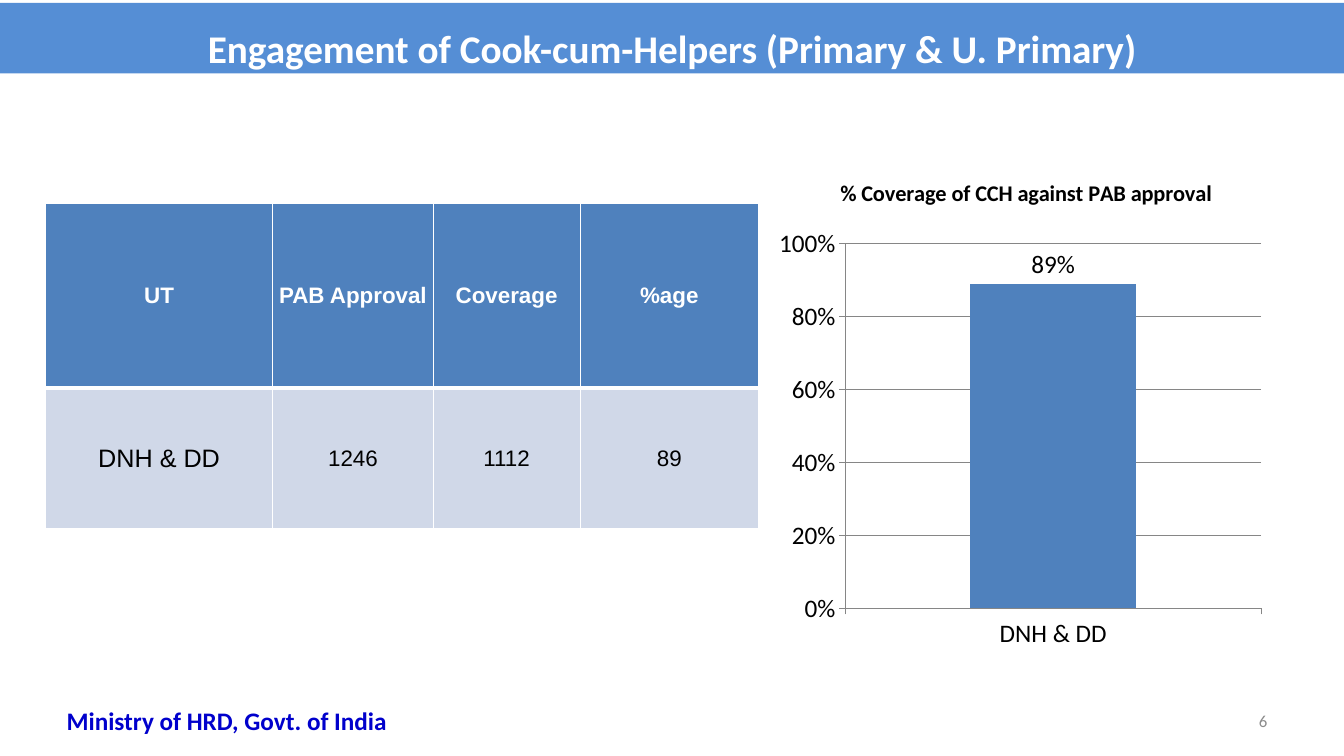
"""Build the slide on engagement of cook-cum-helpers."""
from dataclasses import dataclass
from typing import Any

from lxml.etree import SubElement
from pptx import Presentation
from pptx.chart.chart import Chart
from pptx.chart.data import CategoryChartData
from pptx.dml.color import RGBColor
from pptx.enum.chart import XL_CHART_TYPE as ChartType
from pptx.enum.chart import XL_LABEL_POSITION as LabelPosition
from pptx.enum.chart import XL_TICK_MARK as TickMark
from pptx.enum.shapes import MSO_SHAPE as Preset
from pptx.enum.text import MSO_ANCHOR as Anchor
from pptx.enum.text import PP_ALIGN as Align
from pptx.oxml import parse_xml
from pptx.oxml.ns import nsdecls, qn
from pptx.table import _Cell as Cell
from pptx.text.text import Font
from pptx.util import Pt

WHITE = RGBColor(0xFF, 0xFF, 0xFF)
BLACK = RGBColor(0x00, 0x00, 0x00)
BANNER_BLUE = RGBColor(0x55, 0x8E, 0xD5)
ACCENT_BLUE = RGBColor(0x4F, 0x81, 0xBD)
PALE_BLUE = RGBColor(0xD0, 0xD8, 0xE8)
MINISTRY_BLUE = RGBColor(0x00, 0x00, 0xCC)
NUMBER_GRAY = RGBColor(0x8C, 0x8C, 0x8C)
AXIS_GRAY = RGBColor(0x86, 0x86, 0x86)


@dataclass(frozen=True)
class TextStyle:
    size: float
    color: RGBColor
    bold: bool = False
    name: str = "Calibri"


@dataclass(frozen=True)
class Caption:
    text: str
    box: tuple[float, float, float, float]
    style: TextStyle
    align: Align
    anchor: Anchor
    fill: RGBColor | None = None
    line_spacing: float = 1.0


@dataclass(frozen=True)
class CoverageRow:
    height: float
    values: tuple[str, ...]
    styles: tuple[TextStyle, ...]
    fill: RGBColor
    bottom_border: float


HEADING = TextStyle(16, WHITE, True, "Arial")
FIGURE = TextStyle(16, BLACK, name="Arial")
TERRITORY = TextStyle(18, BLACK, name="Arial")
AXIS_TEXT = TextStyle(18, BLACK)
CHART_TITLE = TextStyle(16, BLACK, True)

CAPTIONS = (
    Caption("Engagement of Cook-cum-Helpers (Primary & U. Primary)", (0, 2, 960, 50.4),
            TextStyle(28, WHITE, True), Align.CENTER, Anchor.MIDDLE, BANNER_BLUE, 1.4),
    Caption("6", (688.3, 500.4, 224, 28.8), TextStyle(12, NUMBER_GRAY),
            Align.RIGHT, Anchor.MIDDLE),
    Caption("Ministry of HRD, Govt. of India", (20.9, 500.4, 282.2, 28.8),
            TextStyle(18, MINISTRY_BLUE, True), Align.CENTER, Anchor.TOP),
)
COLUMN_WIDTHS = (162.5, 114.5, 105, 127.5)
COVERAGE_ROWS = (
    CoverageRow(132, ("UT", "PAB Approval", "Coverage", "%age"),
                (HEADING,) * 4, ACCENT_BLUE, 3),
    CoverageRow(100, ("DNH & DD", "1246", "1112", "89"),
                (TERRITORY,) + (FIGURE,) * 3, PALE_BLUE, 1),
)
PLOT_AREA = {"x": 0.14, "y": 0.166, "w": 0.828, "h": 0.71}


def apply_style(font: Font, style: TextStyle) -> None:
    formats = {"size": Pt(style.size), "bold": style.bold, "name": style.name}
    for attribute, value in formats.items():
        setattr(font, attribute, value)
    font.color.rgb = style.color


def draw_caption(shapes: Any, caption: Caption) -> None:
    box = [Pt(length) for length in caption.box]
    if caption.fill is None:
        holder = shapes.add_textbox(*box)
    else:
        holder = shapes.add_shape(Preset.RECTANGLE, *box)
        holder.shadow.inherit = False
        holder.fill.solid()
        holder.fill.fore_color.rgb = caption.fill
        holder.line.fill.background()
    frame = holder.text_frame
    frame.word_wrap = True
    frame.vertical_anchor = caption.anchor
    paragraph = frame.paragraphs[0]
    paragraph.alignment = caption.align
    paragraph.line_spacing = caption.line_spacing
    run = paragraph.add_run()
    run.text = caption.text
    apply_style(run.font, caption.style)


def set_borders(cell: Cell, bottom: float) -> None:
    properties = cell._tc.get_or_add_tcPr()
    widths = {"lnL": 1, "lnR": 1, "lnT": 1, "lnB": bottom}
    for position, (side, width) in enumerate(widths.items()):
        properties.insert(position, parse_xml(
            f'<a:{side} {nsdecls("a")} w="{Pt(width)}"><a:solidFill>'
            f'<a:srgbClr val="{WHITE}"/></a:solidFill></a:{side}>'))


def draw_coverage_table(shapes: Any) -> None:
    heights = [row.height for row in COVERAGE_ROWS]
    table = shapes.add_table(len(heights), len(COLUMN_WIDTHS), Pt(32.4), Pt(145.4),
                             Pt(sum(COLUMN_WIDTHS)), Pt(sum(heights))).table
    table.horz_banding = False
    for column, width in zip(table.columns, COLUMN_WIDTHS):
        column.width = Pt(width)
    for table_row, row in zip(table.rows, COVERAGE_ROWS):
        table_row.height = Pt(row.height)
        for cell, value, style in zip(table_row.cells, row.values, row.styles):
            for side in ("left", "top", "right", "bottom"):
                setattr(cell, f"margin_{side}", Pt(0))
            cell.vertical_anchor = Anchor.MIDDLE
            cell.fill.solid()
            cell.fill.fore_color.rgb = row.fill
            set_borders(cell, row.bottom_border)
            paragraph = cell.text_frame.paragraphs[0]
            paragraph.alignment = Align.CENTER
            run = paragraph.add_run()
            run.text = value
            apply_style(run.font, style)


def place_plot(chart: Chart) -> None:
    plot_area = chart._chartSpace.chart.plotArea
    for old_layout in plot_area.findall(qn("c:layout")):
        plot_area.remove(old_layout)
    layout = parse_xml(f'<c:layout {nsdecls("c")}/>')
    manual = SubElement(layout, qn("c:manualLayout"))
    settings = {"layoutTarget": "inner", "xMode": "edge", "yMode": "edge", **PLOT_AREA}
    for tag, value in settings.items():
        SubElement(manual, qn(f"c:{tag}")).set("val", str(value))
    plot_area.insert(0, layout)


def draw_coverage_chart(shapes: Any) -> None:
    coverage = CategoryChartData(number_format="0%")
    coverage.categories = ["DNH & DD"]
    coverage.add_series("Series 1", [0.89])
    chart = shapes.add_chart(ChartType.COLUMN_CLUSTERED, Pt(553.7), Pt(113),
                             Pt(358.6), Pt(367.2), coverage).chart
    apply_style(chart.font, AXIS_TEXT)
    chart.has_legend = False
    chart.has_title = True
    title_run = chart.chart_title.text_frame.paragraphs[0].add_run()
    title_run.text = "% Coverage of CCH against PAB approval"
    apply_style(title_run.font, CHART_TITLE)
    chart.chart_title.include_in_layout = False

    percent_axis = chart.value_axis
    scale = {"minimum_scale": 0, "maximum_scale": 1, "major_unit": 0.2,
             "has_major_gridlines": True}
    for attribute, value in scale.items():
        setattr(percent_axis, attribute, value)
    percent_axis.tick_labels.number_format = "0%"
    percent_axis.tick_labels.number_format_is_linked = False
    for axis in (percent_axis, chart.category_axis):
        axis.major_tick_mark = TickMark.OUTSIDE
        apply_style(axis.tick_labels.font, AXIS_TEXT)
    for ruled in (percent_axis, chart.category_axis, percent_axis.major_gridlines):
        ruled.format.line.color.rgb = AXIS_GRAY
        ruled.format.line.width = Pt(0.75)

    columns = chart.plots[0]
    columns.gap_width = 150
    columns.vary_by_categories = False
    columns.series[0].format.fill.solid()
    columns.series[0].format.fill.fore_color.rgb = ACCENT_BLUE
    columns.has_data_labels = True
    labels = columns.data_labels
    label_formats = {"show_value": True, "number_format": "0%",
                     "number_format_is_linked": False,
                     "position": LabelPosition.OUTSIDE_END}
    for attribute, value in label_formats.items():
        setattr(labels, attribute, value)
    apply_style(labels.font, AXIS_TEXT)
    place_plot(chart)


def main() -> None:
    deck = Presentation()
    deck.slide_width, deck.slide_height = Pt(960), Pt(540)
    shapes = deck.slides.add_slide(deck.slide_layouts[6]).shapes
    for caption in CAPTIONS:
        draw_caption(shapes, caption)
    draw_coverage_table(shapes)
    draw_coverage_chart(shapes)
    deck.save("out.pptx")


if __name__ == "__main__":
    main()
